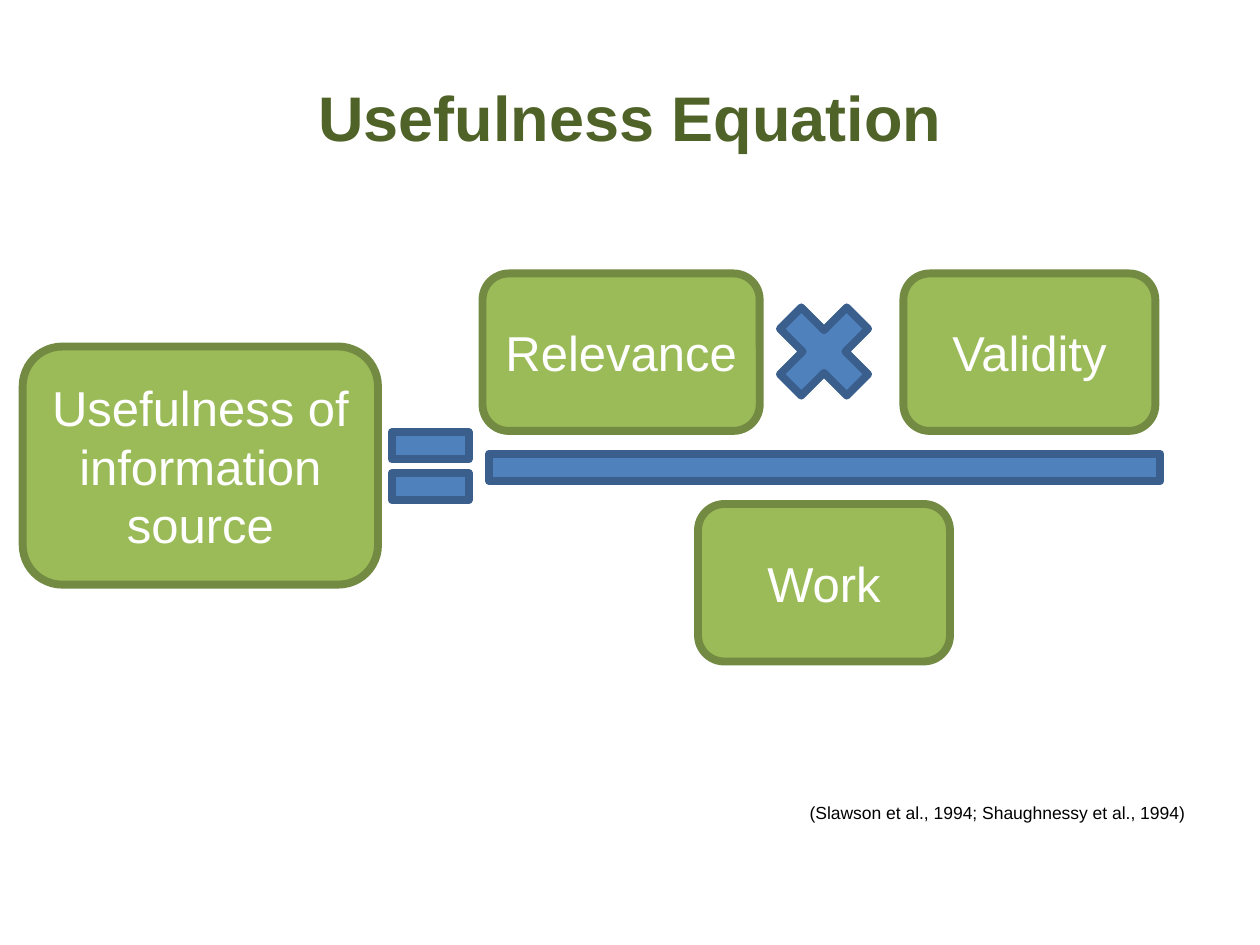
from pptx import Presentation
from pptx.dml.color import RGBColor
from pptx.enum.shapes import MSO_SHAPE
from pptx.enum.text import MSO_ANCHOR, PP_ALIGN
from pptx.util import Inches, Pt

ROUND = MSO_SHAPE.ROUNDED_RECTANGLE
EQUAL, MINUS, TIMES = MSO_SHAPE.MATH_EQUAL, MSO_SHAPE.MATH_MINUS, MSO_SHAPE.MATH_MULTIPLY
MIDDLE, BOTTOM = MSO_ANCHOR.MIDDLE, MSO_ANCHOR.BOTTOM
CENTER, RIGHT = PP_ALIGN.CENTER, PP_ALIGN.RIGHT

OLIVE = RGBColor(0x4F, 0x62, 0x28)
GREEN = RGBColor(0x9B, 0xBB, 0x59)
MOSS = RGBColor(0x73, 0x8A, 0x42)
BLUE = RGBColor(0x4F, 0x81, 0xBD)
NAVY = RGBColor(0x3A, 0x5F, 0x8C)
WHITE = RGBColor(0xFF, 0xFF, 0xFF)
BLACK = RGBColor(0, 0, 0)

# Content: left, top, width, height in inches
TITLE = ("Usefulness Equation", (0.5, 0.3, 9, 1.25))
SOURCE = ("(Slawson et al., 1994; Shaughnessy et al., 1994)", (5.7, 6.19, 3.8, 0.39))
SIGNS = [
    (EQUAL, (3, 3.24, 0.83, 0.92)),
    (MINUS, (2.92, 3.25, 7.25, 0.92)),
    (TIMES, (6.03, 2.28, 1.02, 1.02)),
]
TERMS = [
    ("Usefulness of information source", (0.18, 2.75, 2.82, 1.89)),
    ("Relevance", (3.83, 2.17, 2.2, 1.25)),
    ("Validity", (7.17, 2.17, 2, 1.25)),
    ("Work", (5.54, 4, 2, 1.25)),
]


def write(shape, text, size, color, align=CENTER, anchor=MIDDLE, bold=False):
    frame = shape.text_frame
    frame.word_wrap = True
    frame.vertical_anchor = anchor
    para = frame.paragraphs[0]
    para.text = text
    para.alignment = align
    font = para.font
    font.name, font.size, font.bold = "Arial", Pt(size), bold
    font.color.rgb = color
    return para


def draw(slide, kind, box, fill, edge):
    shape = slide.shapes.add_shape(kind, *map(Inches, box))
    shape.shadow.inherit = False
    shape.fill.solid()
    shape.fill.fore_color.rgb = fill
    shape.line.color.rgb = edge
    shape.line.width = Pt(4.5)
    return shape


def label(slide, box):
    return slide.shapes.add_textbox(*map(Inches, box))


def main():
    deck = Presentation()
    deck.slide_width, deck.slide_height = Inches(10), Inches(7.5)
    slide = deck.slides.add_slide(deck.slide_layouts[6])

    # Title
    text, box = TITLE
    write(label(slide, box), text, 36, OLIVE, bold=True)

    # Operators, then the terms they join
    for kind, box in SIGNS:
        draw(slide, kind, box, BLUE, NAVY)
    for text, box in TERMS:
        write(draw(slide, ROUND, box, GREEN, MOSS), text, 28, WHITE)

    # Citation
    text, box = SOURCE
    para = write(label(slide, box), text, 10, BLACK, RIGHT, BOTTOM)
    para.line_spacing = 0.8
    para.space_after = Pt(12)

    deck.save("out.pptx")


if __name__ == "__main__":
    main()
